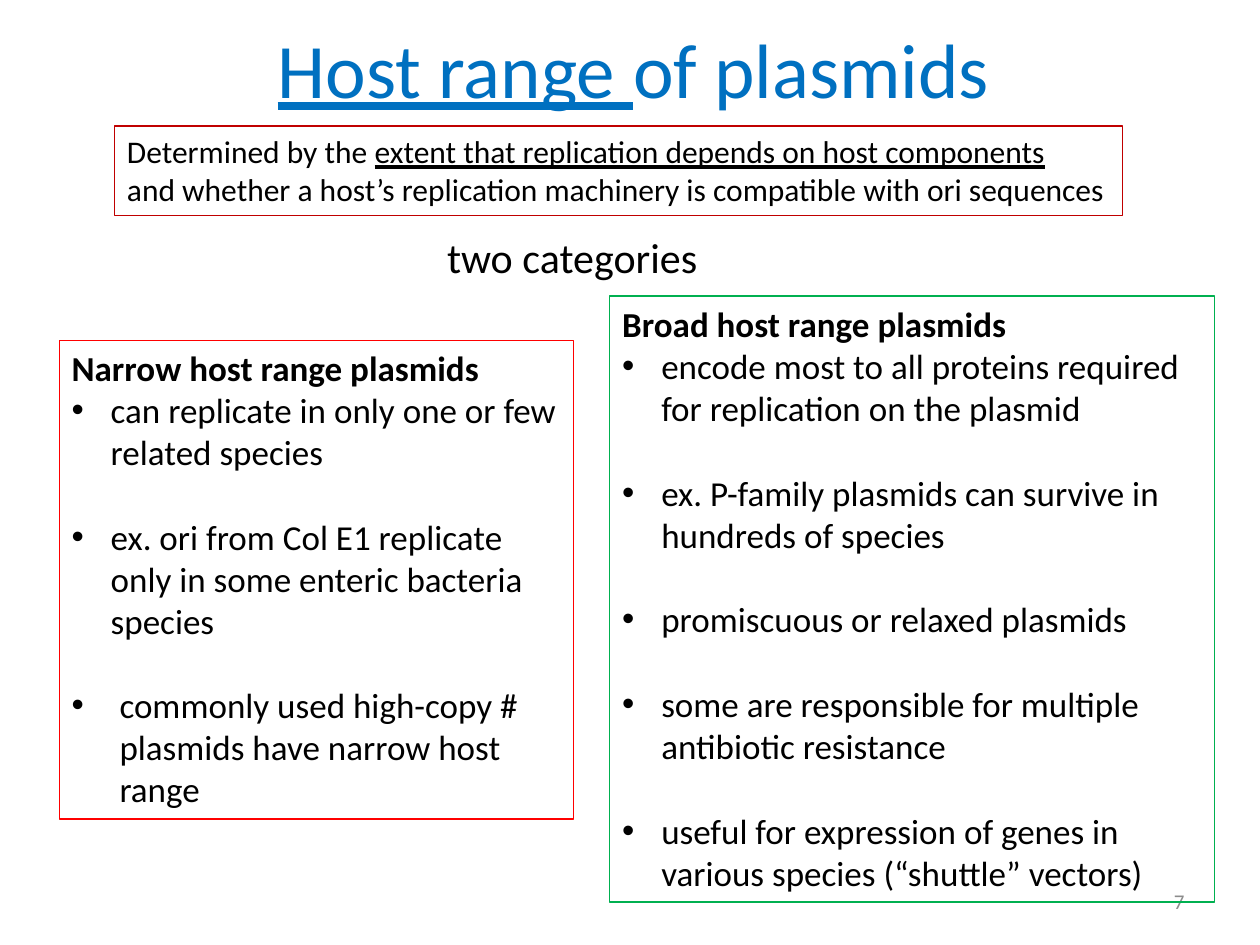
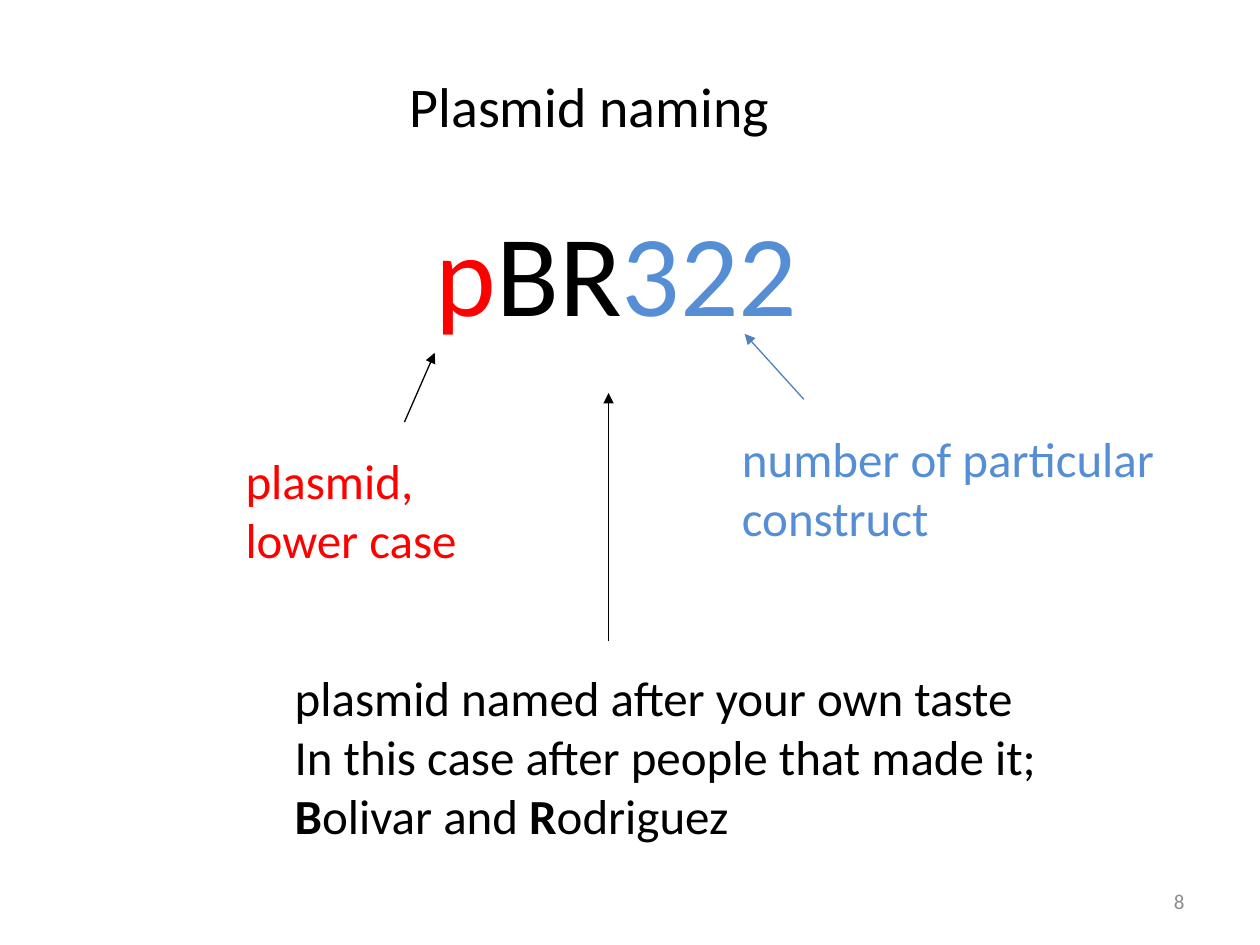
"""Build two slides on the host range and the naming of plasmids."""
from lxml import etree
from pptx import Presentation
from pptx.dml.color import RGBColor
from pptx.enum import shapes, text
from pptx.oxml.ns import qn
from pptx.util import Inches, Pt

FONT = "Calibri"
BLACK, RED, DARK_RED, GREEN = "000000", "FF0000", "C00000", "00B050"
TITLE_BLUE, NUMBER_BLUE, ARROW_BLUE, GREY = "0070C0", "558ED5", "4F81BD", "8C8C8C"
BULLET_INDENT = 0.31
BULLET_GAP = 24.4
PAGE_NUMBER_AT = (7.17, 6.95, 2.33, 0.4)

RANGE_TITLE = [[("Host range ", "u"), "of plasmids"]]
DEFINITION = [
    ["Determined by the ", ("extent that replication depends on host components", "u")],
    ["and whether a host’s replication machinery is compatible with ori sequences"],
]
CATEGORIES = [
    ("Narrow host range plasmids", (0.47, 2.7, 4.08, 3.8), RED, [
        ("can replicate in only one or few related species", BULLET_INDENT),
        ("ex. ori from Col E1 replicate only in some enteric bacteria species", BULLET_INDENT),
        ("commonly used high-copy # plasmids have narrow host range", 0.38),
    ]),
    ("Broad host range plasmids", (4.84, 2.35, 4.8, 4.81), GREEN, [
        (item, BULLET_INDENT) for item in (
            "encode most to all proteins required for replication on the plasmid",
            "ex. P-family plasmids can survive in hundreds of species",
            "promiscuous or relaxed plasmids",
            "some are responsible for multiple antibiotic resistance",
            "useful for expression of genes in various species (“shuttle” vectors)",
        )
    ]),
]

NAMING_TITLE = [["Plasmid naming "]]
PLASMID_NAME = [[("p", RED), "BR", ("322", NUMBER_BLUE)]]
NAME_PARTS = [
    ([["plasmid,"], ["lower case"]], (1.85, 3.53, 1.99, 1.04), RED),
    ([["plasmid named after your own taste"],
      ["In this case after people that made it; ", ("B", "b"), "olivar and ",
       ("R", "b"), "odriguez"]], (2.24, 5.25, 6.38, 1.51), BLACK),
    ([["number of particular construct"]], (5.79, 3.35, 3.95, 1.04), NUMBER_BLUE),
]
ARROWS = [
    ((3.21, 3.35), (3.45, 2.8), BLACK),
    ((4.83, 5.09), (4.83, 3.12), BLACK),
    ((6.38, 3.17), (5.91, 2.65), ARROW_BLUE),
]


def rgb(color):
    """Turn a hex string into a colour."""
    return RGBColor.from_string(color)


def write(tf, paragraphs, size, color=BLACK, align=text.PP_ALIGN.LEFT):
    """Fill a text frame; a run is a string or a pair with "b", "u" or a colour."""
    tf.word_wrap = True
    for i, runs in enumerate(paragraphs):
        p = tf.add_paragraph() if i else tf.paragraphs[0]
        p.alignment = align
        for run in runs:
            content, style = (run, "") if isinstance(run, str) else run
            r = p.add_run()
            r.text = content
            r.font.name, r.font.size = FONT, Pt(size)
            r.font.bold, r.font.underline = style == "b", style == "u"
            r.font.color.rgb = rgb(style if len(style) == 6 else color)


def add_text(s, at, paragraphs, size, color=BLACK, border=None, align=text.PP_ALIGN.LEFT):
    """Add a text box, framed when a border colour is given."""
    sp = s.shapes.add_textbox(*map(Inches, at))
    write(sp.text_frame, paragraphs, size, color, align)
    if border:
        sp.line.color.rgb = rgb(border)
        sp.line.width = Pt(0.75)
    return sp


def add_bullet(p, indent):
    """Give a paragraph a hanging bullet."""
    pPr = p._p.get_or_add_pPr()
    pPr.set("marL", str(Inches(indent)))
    pPr.set("indent", str(-Inches(indent)))
    etree.SubElement(pPr, qn("a:buFont")).set("typeface", "Arial")
    etree.SubElement(pPr, qn("a:buChar")).set("char", "•")


def add_category(s, heading, at, border, items):
    """Add a framed heading with spaced bullets."""
    lines = [[(heading, "b")]] + [[item] for item, _ in items]
    tf = add_text(s, at, lines, 20, border=border).text_frame
    for i, (p, (_, indent)) in enumerate(zip(tf.paragraphs[1:], items)):
        p.space_before = Pt(BULLET_GAP if i else 0)
        add_bullet(p, indent)


def add_arrow(s, start, end, color):
    """Add a thin line with an arrowhead at its end."""
    line = s.shapes.add_connector(shapes.MSO_CONNECTOR.STRAIGHT, *map(Inches, start + end))
    line.line.color.rgb = rgb(color)
    line.line.width = Pt(0.75)
    etree.SubElement(line.line._get_or_add_ln(), qn("a:tailEnd")).set("type", "triangle")
    etree.SubElement(line._element.spPr, qn("a:effectLst"))


def add_slide(prs, number, title, at, size, color):
    """Add a slide with its title and page number."""
    s = prs.slides.add_slide(prs.slide_layouts[5])
    sp = s.shapes.title
    sp.left, sp.top, sp.width, sp.height = map(Inches, at)
    sp.text_frame.vertical_anchor = text.MSO_ANCHOR.MIDDLE
    write(sp.text_frame, title, size, color, text.PP_ALIGN.CENTER)
    page = add_text(s, PAGE_NUMBER_AT, [[str(number)]], 12, GREY, align=text.PP_ALIGN.RIGHT)
    page.text_frame.vertical_anchor = text.MSO_ANCHOR.MIDDLE
    return s


def main():
    """Build and save the slides."""
    prs = Presentation()
    prs.slide_width, prs.slide_height = Inches(10), Inches(7.5)

    s = add_slide(prs, 7, RANGE_TITLE, (0.53, -0.09, 9, 1.25), 44, TITLE_BLUE)
    for category in CATEGORIES:
        add_category(s, *category)
    add_text(s, (3.45, 1.79, 2.2, 0.5), [["two categories"]], 24)
    add_text(s, (0.91, 1, 8, 0.71), DEFINITION, 18, border=DARK_RED)

    s = add_slide(prs, 8, NAMING_TITLE, (2.95, 0.21, 3.56, 1.25), 32, BLACK)
    add_text(s, (3.36, 1.55, 3.41, 1.23), PLASMID_NAME, 66)
    for paragraphs, at, color in NAME_PARTS:
        add_text(s, at, paragraphs, 28, color)
    for arrow in ARROWS:
        add_arrow(s, *arrow)

    prs.save("out.pptx")


if __name__ == "__main__":
    main()
